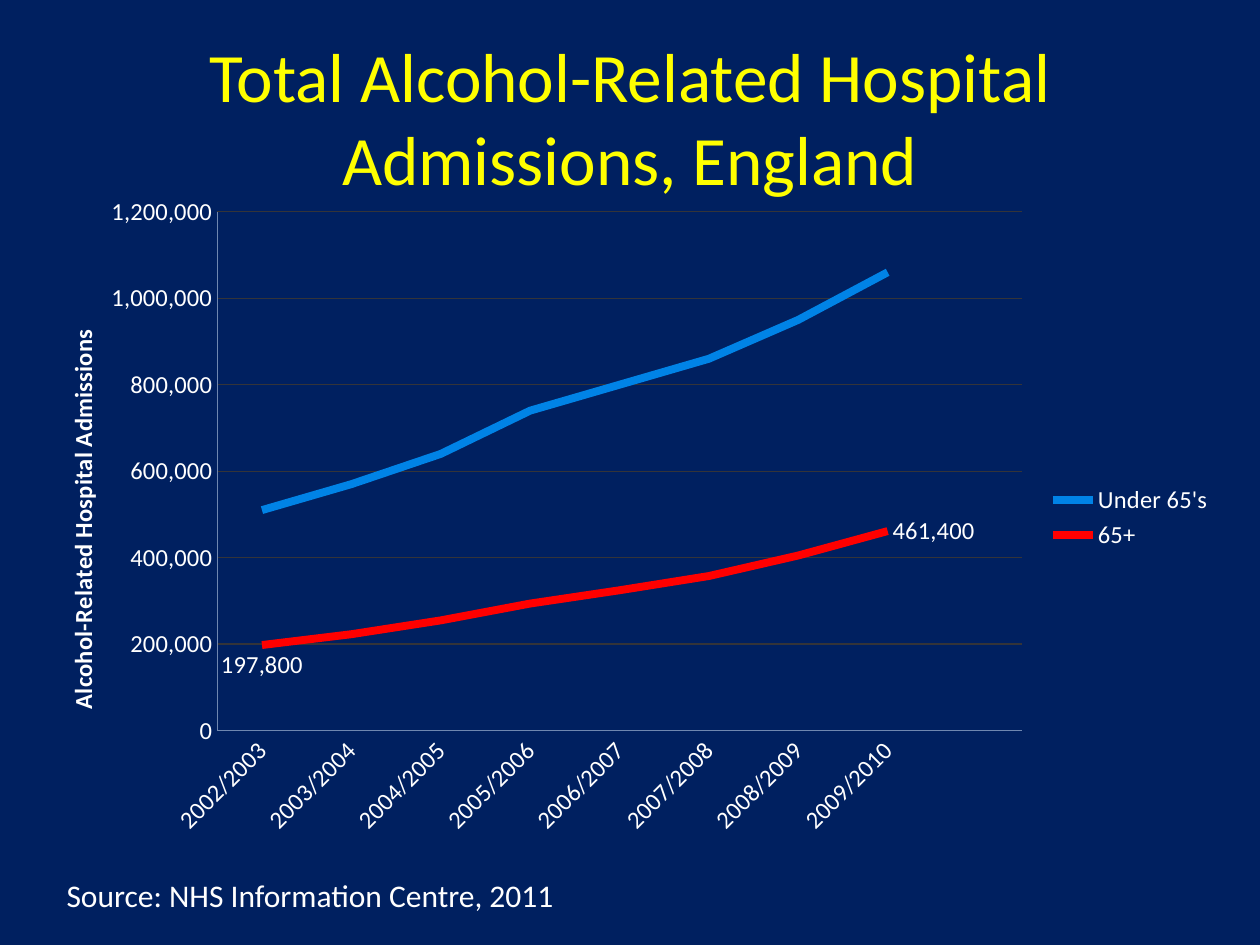
from typing import NamedTuple, Optional

from lxml.etree import SubElement
from pptx import Presentation
from pptx.chart.data import CategoryChartData as ChartData
from pptx.dml.color import RGBColor
from pptx.enum.chart import XL_CHART_TYPE as Kind
from pptx.enum.chart import XL_LABEL_POSITION as Spot
from pptx.enum.chart import XL_LEGEND_POSITION as Side
from pptx.enum.chart import XL_MARKER_STYLE as Marker
from pptx.enum.chart import XL_TICK_MARK as Tick
from pptx.enum.text import MSO_ANCHOR as Anchor
from pptx.enum.text import MSO_AUTO_SIZE as Fit
from pptx.enum.text import PP_ALIGN as Align
from pptx.oxml.ns import qn
from pptx.util import Inches, Pt

FONT = "Calibri"
COLORS = {
    "back": "002060",
    "title": "FFFF00",
    "text": "FFFFFF",
    "under": "0083E6",
    "over": "FF0000",
    "grid": "343439",
    "axis": "6F87B0",
}


class Box(NamedTuple):
    left: float
    top: float
    width: float
    height: float

    def lengths(self) -> list:
        return [Inches(side) for side in self]


class Line(NamedTuple):
    name: str
    color: str
    values: list[Optional[int]]
    labels: dict[int, Spot]


YEARS = [f"{year}/{year + 1}" for year in range(2002, 2010)]
LINES = [
    Line("Under 65's", "under",
         [510000, 570000, 640000, 740000, 800000, 860000, 950000, 1060000], {}),
    Line("65+", "over",
         [197800, 222800, 254900, 293800, 324500, 357400, 404900, 461400],
         {0: Spot.BELOW, 7: Spot.RIGHT}),
]


def rgb(name: str) -> RGBColor:
    return RGBColor.from_string(COLORS[name])


def style(font, size: float, color: str = "text", bold: bool = False) -> None:
    font.name, font.size, font.bold = FONT, Pt(size), bold
    font.color.rgb = rgb(color)


def add_text(slide, text: str, box: Box, *, size: float, color: str = "text",
             align=Align.LEFT, anchor=Anchor.TOP, wrap: bool = True,
             fit=Fit.NONE) -> None:
    frame = slide.shapes.add_textbox(*box.lengths()).text_frame
    frame.word_wrap, frame.auto_size = wrap, fit
    frame.vertical_anchor = anchor
    par = frame.paragraphs[0]
    par.alignment = align
    run = par.add_run()
    run.text = text
    style(run.font, size, color)


def place(part, **spots) -> None:
    """Fix a chart part at fractions of the chart's size."""
    layout = part.find(qn("c:layout"))
    if layout is None:
        layout = SubElement(part, qn("c:layout"))
        before = part.find(qn("c:tx"))
        if before is not None:
            before.addnext(layout)
        else:
            part.insert(0, layout)
    manual = SubElement(layout, qn("c:manualLayout"))
    for tag, value in spots.items():
        SubElement(manual, qn(f"c:{tag}")).set("val", str(value))


def draw_line(series, line: Line) -> None:
    series.smooth = False
    series.marker.style = Marker.NONE
    series.format.line.color.rgb = rgb(line.color)
    series.format.line.width = Pt(4.5)
    for index, spot in line.labels.items():
        label = series.points[index].data_label
        style(label.font, 14)
        label.position = spot


def style_axis(axis) -> None:
    axis.major_tick_mark = axis.minor_tick_mark = Tick.NONE
    axis.format.line.color.rgb = rgb("axis")
    axis.format.line.width = Pt(0.75)
    style(axis.tick_labels.font, 14)


def add_chart(slide, box: Box, lines: list[Line]) -> None:
    # An empty last category leaves room for the end label
    data = ChartData(number_format="#,##0")
    data.categories = YEARS + [""]
    for line in lines:
        data.add_series(line.name, line.values + [None])
    chart = slide.shapes.add_chart(Kind.LINE, *box.lengths(), data).chart
    style(chart.font, 14)
    chart.has_title = False
    plot = chart.plots[0]
    plot.vary_by_categories = False
    for series, line in zip(plot.series, lines):
        draw_line(series, line)

    # Axes
    years, counts = chart.category_axis, chart.value_axis
    for axis in (years, counts):
        style_axis(axis)
    body = years._element.find(qn("c:txPr")).find(qn("a:bodyPr"))
    body.set("rot", "-2700000")
    body.set("vert", "horz")
    counts.minimum_scale, counts.maximum_scale = 0, 1200000
    counts.major_unit = 200000
    counts.tick_labels.number_format = "#,##0"
    counts.tick_labels.number_format_is_linked = False
    counts.major_gridlines.format.line.color.rgb = rgb("grid")
    counts.major_gridlines.format.line.width = Pt(0.75)

    # Value axis title
    frame = counts.axis_title.text_frame
    run = frame.paragraphs[0].add_run()
    run.text = "Alcohol-Related Hospital Admissions"
    style(run.font, 14, bold=True)
    title = counts.axis_title._element
    title.find(".//" + qn("a:bodyPr")).set("rot", "-5400000")
    place(title, xMode="edge", yMode="edge", x=0.03, y=0.21)

    # Legend and plot area
    chart.has_legend = True
    chart.legend.position = Side.RIGHT
    chart.legend.include_in_layout = False
    style(chart.legend.font, 14)
    area = chart._chartSpace.find(".//" + qn("c:plotArea"))
    place(area, layoutTarget="inner", xMode="edge", yMode="edge",
          x=0.16, y=0.04, w=0.67, h=0.78)


def main() -> None:
    deck = Presentation()
    deck.slide_width, deck.slide_height = Inches(10), Inches(7.5)
    slide = deck.slides.add_slide(deck.slide_layouts[6])
    slide.background.fill.solid()
    slide.background.fill.fore_color.rgb = rgb("back")

    # Title, source and chart
    add_text(slide, "Total Alcohol-Related Hospital Admissions, England",
             Box(0.5, 0.3, 9, 1.25), size=39.6, color="title",
             align=Align.CENTER, anchor=Anchor.MIDDLE)
    add_text(slide, "Source: NHS Information Centre, 2011",
             Box(0.43, 6.9, 4.12, 0.4), size=18, wrap=False,
             fit=Fit.SHAPE_TO_FIT_TEXT)
    add_chart(slide, Box(0.2, 1.47, 9.53, 5.28), LINES)
    deck.save("out.pptx")


if __name__ == "__main__":
    main()
